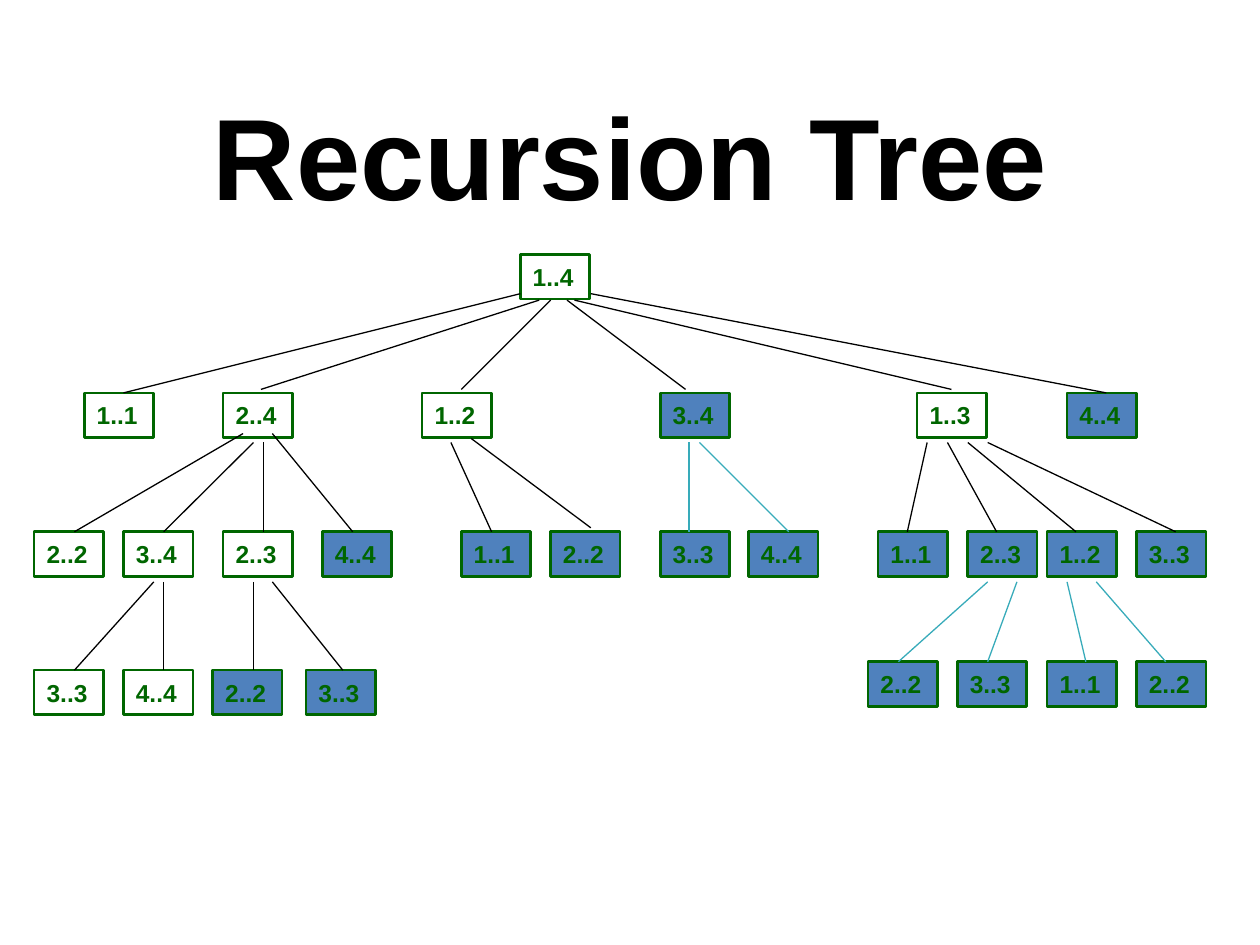
from dataclasses import dataclass

from lxml.etree import SubElement
from pptx import Presentation
from pptx.dml.color import RGBColor
from pptx.enum.shapes import MSO_CONNECTOR, MSO_SHAPE
from pptx.enum.text import MSO_ANCHOR, PP_ALIGN
from pptx.oxml.ns import qn
from pptx.util import Cm, Pt


@dataclass(frozen=True)
class Theme:
    font: str = "Arial"
    title_size: Pt = Pt(66)
    node_size: Pt = Pt(14)
    black: RGBColor = RGBColor(0x00, 0x00, 0x00)
    green: RGBColor = RGBColor(0x00, 0x66, 0x00)
    blue: RGBColor = RGBColor(0x4F, 0x81, 0xBD)
    teal: RGBColor = RGBColor(0x38, 0xAB, 0xBA)


theme = Theme()
NODE_WIDTH, NODE_HEIGHT = 1.4, 0.9
OPEN, REUSED = False, True

# Lengths in cm. A group shares its node top, branch start and end heights and branch
# colour; each node has its label, left edge, state, and branch start and end positions.
groups = [
    (7.92, 5.92, 7.92, theme.black, [
        ("1..1", 1.7, OPEN, 10.49, 2.49),
        ("4..4", 21.51, REUSED, 11.91, 22.3),
    ]),
    (7.92, 6.05, 7.85, theme.black, [
        ("2..4", 4.5, OPEN, 10.87, 5.26),
        ("1..2", 8.51, OPEN, 11.1, 9.3),
        ("3..4", 13.31, REUSED, 11.43, 13.82),
        ("1..3", 18.49, OPEN, 11.58, 19.18),
    ]),
    (10.72, 8.74, 10.72, theme.black, [
        ("2..2", 0.69, OPEN, 4.9, 1.5),
        ("4..4", 6.5, REUSED, 5.49, 7.11),
    ]),
    (10.72, 8.92, 10.72, theme.black, [
        ("3..4", 2.49, OPEN, 5.11, 3.3),
        ("2..3", 4.5, OPEN, 5.31, 5.31),
        ("1..1", 9.3, REUSED, 9.09, 9.91),
        ("1..1", 17.7, REUSED, 18.69, 18.29),
        ("2..3", 19.51, REUSED, 19.1, 20.09),
        ("1..2", 21.11, REUSED, 19.51, 21.69),
        ("3..3", 22.91, REUSED, 19.91, 23.7),
    ]),
    (10.72, 8.84, 10.64, theme.black, [("2..2", 11.1, REUSED, 9.5, 11.91)]),
    (10.72, 8.92, 10.72, theme.teal, [
        ("3..3", 13.31, REUSED, 13.89, 13.89),
        ("4..4", 15.09, REUSED, 14.1, 15.9),
    ]),
    (13.51, 11.73, 13.51, theme.black, [
        ("3..3", 0.69, OPEN, 3.1, 1.5),
        ("4..4", 2.49, OPEN, 3.3, 3.3),
        ("2..2", 4.29, REUSED, 5.11, 5.11),
        ("3..3", 6.17, REUSED, 5.49, 6.91),
    ]),
    (13.34, 11.73, 13.34, theme.teal, [
        ("2..2", 17.5, REUSED, 19.91, 18.11),
        ("3..3", 19.3, REUSED, 20.5, 19.91),
        ("1..1", 21.11, REUSED, 21.51, 21.89),
        ("2..2", 22.91, REUSED, 22.1, 23.5),
    ]),
]


def style_text(shape, size, color, alignment):
    text_frame = shape.text_frame
    text_frame.word_wrap = True
    text_frame.vertical_anchor = MSO_ANCHOR.MIDDLE
    paragraph = text_frame.paragraphs[0]
    paragraph.alignment = alignment
    font = paragraph.runs[0].font
    font.name, font.size, font.bold = theme.font, size, True
    font.color.rgb = color


def add_node(label, left, top, reused):
    shape = slide.shapes.add_shape(
        MSO_SHAPE.RECTANGLE, Cm(left), Cm(top), Cm(NODE_WIDTH), Cm(NODE_HEIGHT))
    shape.shadow.inherit = False
    if reused:
        shape.fill.solid()
        shape.fill.fore_color.rgb = theme.blue
    else:
        shape.fill.background()
    shape.line.color.rgb = theme.green
    shape.line.width = Pt(1.5)
    shape.text_frame.text = label
    shape.text_frame.margin_right = 0
    style_text(shape, theme.node_size, theme.green, PP_ALIGN.LEFT)


presentation = Presentation()
presentation.slide_width, presentation.slide_height = Cm(25.4), Cm(19.05)
slide = presentation.slides.add_slide(presentation.slide_layouts[5])

title = slide.shapes.title
title.left, title.top, title.width, title.height = Cm(1.27), Cm(1.52), Cm(22.86), Cm(3.18)
title.text_frame.text = "Recursion Tree"
style_text(title, theme.title_size, theme.black, PP_ALIGN.CENTER)

add_node("1..4", 10.49, 5.13, OPEN)
for top, _, _, _, nodes in groups:
    for label, left, reused, _, _ in nodes:
        add_node(label, left, top, reused)

for _, start_y, end_y, color, nodes in groups:
    for _, _, _, start_x, end_x in nodes:
        branch = slide.shapes.add_connector(
            MSO_CONNECTOR.STRAIGHT, Cm(start_x), Cm(start_y), Cm(end_x), Cm(end_y))
        branch.line.color.rgb = color
        branch.line.width = Pt(0.75)
        SubElement(branch._element.spPr, qn("a:effectLst"))

presentation.save("out.pptx")
